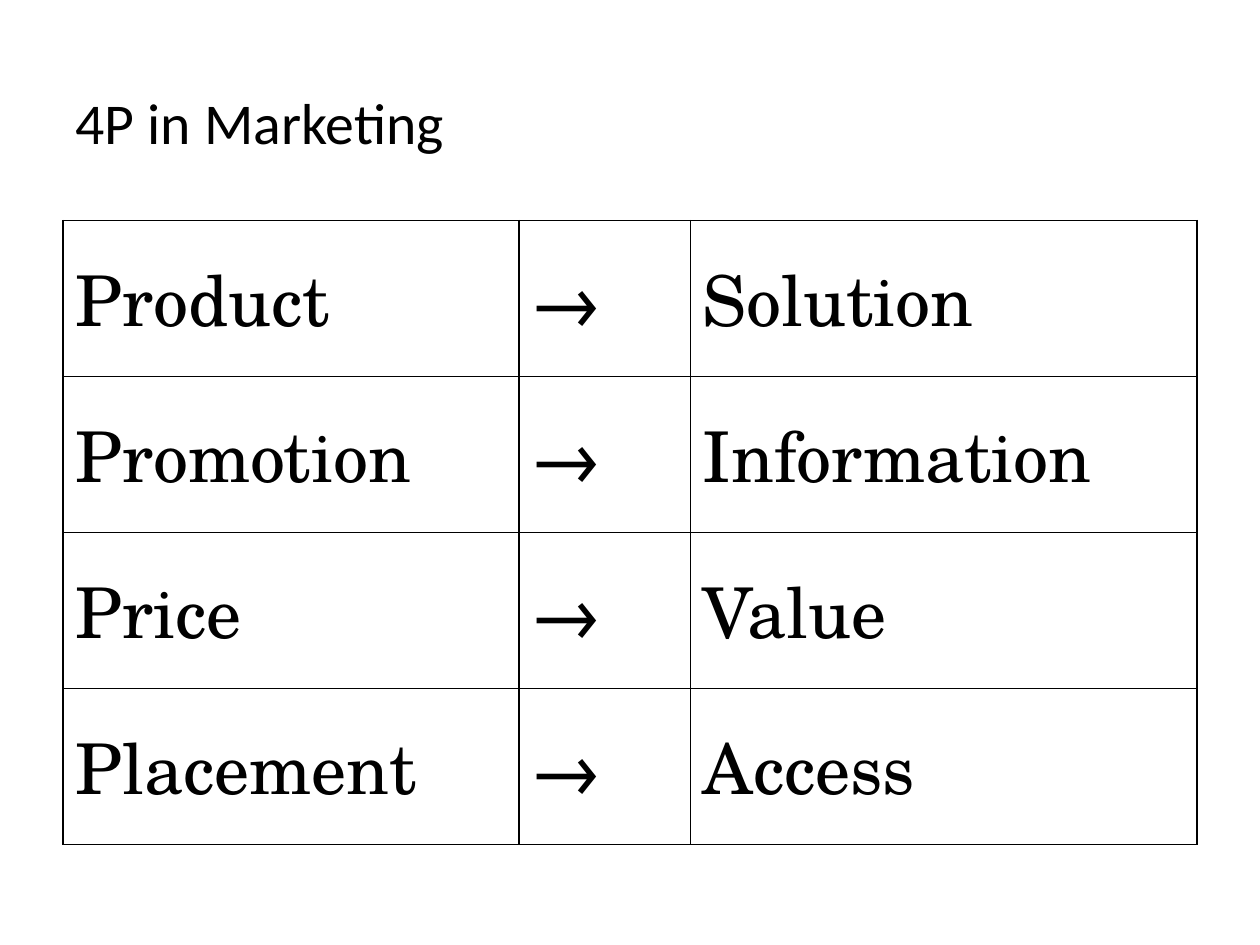
from collections import namedtuple
from dataclasses import dataclass

from lxml.etree import SubElement
from pptx import Presentation
from pptx.dml.color import RGBColor
from pptx.enum.text import MSO_ANCHOR as Anchor, PP_ALIGN as Align
from pptx.oxml.ns import qn
from pptx.util import Pt

Box = namedtuple("Box", "left top width height")


@dataclass(frozen=True)
class Theme:
    ink: str = "000000"
    title_font: str = "Calibri"
    title_size: float = 33
    table_font: str = "TeX Gyre Schola"
    table_size: float = 40
    border_width: float = 1
    hanging_indent: float = 27


THEME = Theme()
TITLE_BOX = Box(36, 31.7, 648, 80)
TABLE_BOX = Box(36, 126, 648, 356.6)
COLUMN_WIDTHS = (260.6, 97.9, 289.5)
MARKETING_PAIRS = (
    ("Product", "Solution"),
    ("Promotion", "Information"),
    ("Price", "Value"),
    ("Placement", "Access"),
)


def write_run(paragraph, text, font_name, size):
    run = paragraph.add_run()
    run.text = text
    font_format = {"name": font_name, "size": Pt(size), "bold": False}
    for name, value in font_format.items():
        setattr(run.font, name, value)
    run.font.color.rgb = RGBColor.from_string(THEME.ink)


def add_title(slide, box, text):
    title = slide.shapes.title
    for name, value in box._asdict().items():
        setattr(title, name, Pt(value))
    frame = title.text_frame
    frame.word_wrap = True
    frame.vertical_anchor = Anchor.MIDDLE
    paragraph = frame.paragraphs[0]
    paragraph.alignment = Align.LEFT
    paragraph.line_spacing = 0.9
    write_run(paragraph, text, THEME.title_font, THEME.title_size)


def set_borders(cell):
    properties = cell._tc.get_or_add_tcPr()
    for position, side in enumerate(("lnL", "lnR", "lnT", "lnB")):
        line = properties.makeelement(qn(f"a:{side}"), {"w": str(Pt(THEME.border_width))})
        fill = SubElement(line, qn("a:solidFill"))
        SubElement(fill, qn("a:srgbClr"), val=THEME.ink)
        properties.insert(position, line)


def fill_cell(cell, text):
    cell.fill.background()
    cell.vertical_anchor = Anchor.MIDDLE
    set_borders(cell)
    paragraph = cell.text_frame.paragraphs[0]
    indent = Pt(THEME.hanging_indent)
    paragraph_properties = paragraph._p.get_or_add_pPr()
    paragraph_properties.set("marL", str(indent))
    paragraph_properties.set("indent", str(-indent))
    write_run(paragraph, text, THEME.table_font, THEME.table_size)


def add_pairs_table(slide, box, pairs):
    """Place one row per pair, with an arrow between its two words."""
    lengths = [Pt(value) for value in box]
    table = slide.shapes.add_table(len(pairs), len(COLUMN_WIDTHS), *lengths).table
    table.first_row = table.horz_banding = False
    for column, width in zip(table.columns, COLUMN_WIDTHS):
        column.width = Pt(width)
    for row, (seller_term, buyer_term) in zip(table.rows, pairs):
        row.height = Pt(box.height / len(pairs))
        for cell, text in zip(row.cells, (seller_term, "→", buyer_term)):
            fill_cell(cell, text)


def main():
    presentation = Presentation()
    presentation.slide_width = Pt(720)
    presentation.slide_height = Pt(540)
    title_only = presentation.slide_layouts[5]
    slide = presentation.slides.add_slide(title_only)
    add_title(slide, TITLE_BOX, "4P in Marketing")
    add_pairs_table(slide, TABLE_BOX, MARKETING_PAIRS)
    presentation.save("out.pptx")


if __name__ == "__main__":
    main()
